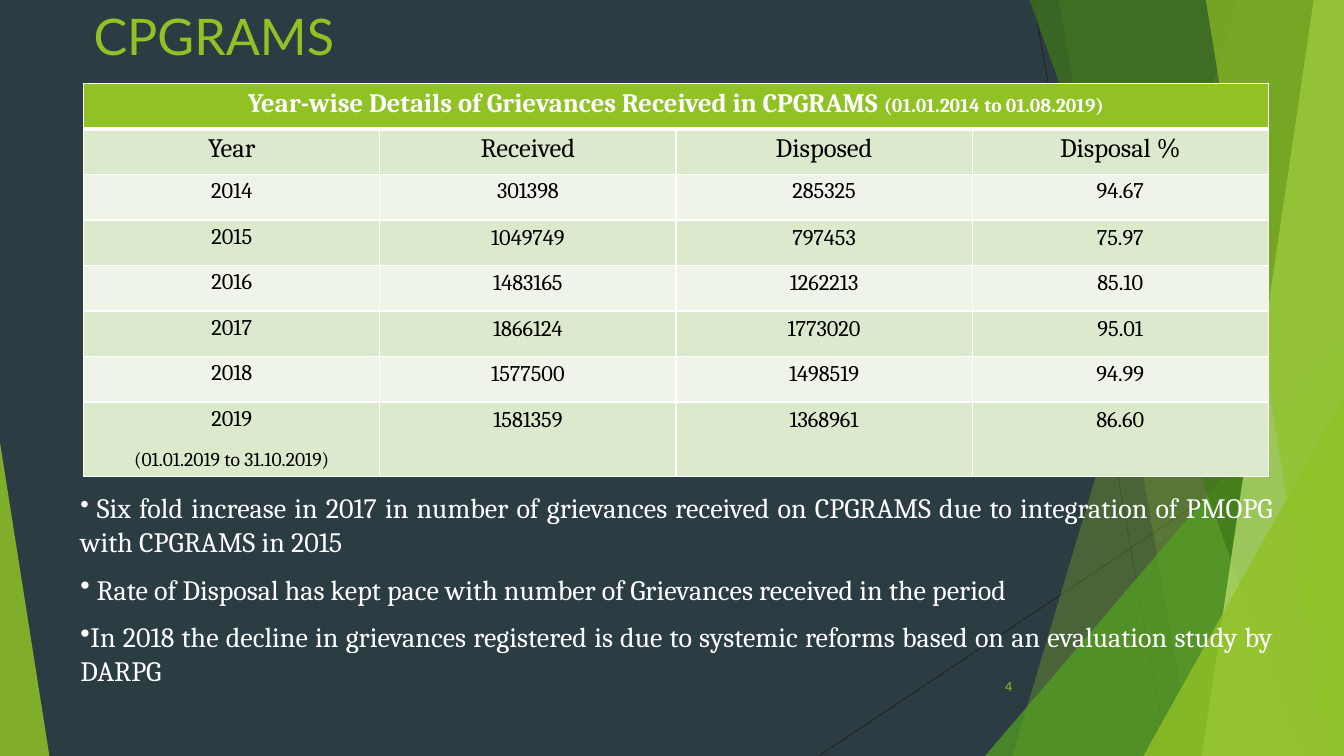
from collections import namedtuple
from dataclasses import dataclass

from lxml import etree
from pptx import Presentation
from pptx.dml.color import RGBColor
from pptx.enum.shapes import MSO_CONNECTOR as CONN, MSO_SHAPE as SHAPE
from pptx.enum.text import MSO_ANCHOR as ANCHOR, PP_ALIGN as ALIGN
from pptx.oxml.ns import qn
from pptx.util import Inches, Pt

Box = namedtuple("Box", "x y w h")


@dataclass(frozen=True)
class Theme:
    back: str = "2C3C43"
    green: str = "90C226"
    leaf: str = "54A021"
    forest: str = "3F7819"
    lime: str = "C0E474"
    line: str = "262626"
    white: str = "FFFFFF"
    black: str = "000000"
    band_dark: str = "DBE9CD"
    band_light: str = "EEF4E8"
    sans: str = "Lato"
    serif: str = "Cambria"
    title: int = 36
    body: int = 20
    lead: int = 18
    head: int = 19
    cell: int = 16
    note: int = 14
    number: int = 9


T = Theme()
HEADING = [("Year-wise Details of Grievances Received in CPGRAMS ", T.head),
           ("(01.01.2014 to 01.08.2019)", T.note)]
COLUMNS = ["Year", "Received", "Disposed", "Disposal %"]
RECORDS = [
    ("2014", "301398", "285325", "94.67"),
    ("2015", "1049749", "797453", "75.97"),
    ("2016", "1483165", "1262213", "85.10"),
    ("2017", "1866124", "1773020", "95.01"),
    ("2018", "1577500", "1498519", "94.99"),
    ("2019", "1581359", "1368961", "86.60"),
]
LAST_PERIOD = "(01.01.2019 to 31.10.2019)"
POINTS = [
    [(" ", T.lead), ("Six fold increase in 2017 in number of grievances received on CPGRAMS "
                     "due to integration of PMOPG with CPGRAMS in 2015", T.body)],
    [(" Rate of Disposal has kept pace with number of Grievances received in the period", T.body)],
    [("In 2018 the decline in grievances registered is due to systemic reforms "
      "based on an evaluation study by DARPG", T.body)],
]


def rgb(color):
    return RGBColor.from_string(color)


def add_run(p, text, size, color, font, bold=False):
    r = p.add_run()
    r.text = text
    r.font.size, r.font.name, r.font.bold = Pt(size), font, bold
    r.font.color.rgb = rgb(color)


def add_text_box(s, box):
    tf = s.shapes.add_textbox(*map(Inches, box)).text_frame
    tf.word_wrap = True
    return tf


def paint(sp, color, opacity):
    sp.shadow.inherit = False
    sp.fill.solid()
    sp.fill.fore_color.rgb = rgb(color)
    sp.line.fill.background()
    clr = sp.fill._xPr.find(qn("a:solidFill"))[0]
    etree.SubElement(clr, qn("a:alpha"), val=str(opacity * 1000))


def add_ray(s, x1, y1, x2, y2):
    cn = s.shapes.add_connector(CONN.STRAIGHT, *map(Inches, (x1, y1, x2, y2)))
    cn.line.color.rgb = rgb(T.line)
    cn.line.width = Pt(0.75)
    etree.SubElement(cn._element.spPr, qn("a:effectLst"))


def add_band(s, box, top, bottom, color, opacity):
    right, base = box.x + box.w, box.y + box.h
    corners = [(top, box.y), (right, box.y), (right, base), (bottom, base)]
    points = [(Inches(x), Inches(y)) for x, y in corners]
    fb = s.shapes.build_freeform(*points[0], scale=1.0)
    fb.add_line_segments(points[1:], close=True)
    paint(fb.convert_to_shape(), color, opacity)


def add_wedge(s, box, apex, color, opacity):
    sp = s.shapes.add_shape(SHAPE.ISOSCELES_TRIANGLE, *map(Inches, box))
    sp.adjustments[0] = apex
    paint(sp, color, opacity)


def add_backdrop(s, box):
    right, base = box.x + box.w, box.y + box.h
    add_ray(s, right - 3.08, box.y, right - 1.75, base)
    add_ray(s, right, base - 3.47, right - 5.21, base)

    def band(top, bottom, color, opacity):
        add_band(s, box, right - top, right - bottom, color, opacity)

    def wedge(w, h, color, opacity):
        add_wedge(s, Box(right - w, base - h, w, h), 1, color, opacity)

    band(1.05, 3.29, T.green, 30)
    band(2.83, 1.5, T.green, 20)
    wedge(3.56, 4.17, T.leaf, 72)
    band(3.12, 0.42, T.forest, 70)
    band(0.3, 1.41, T.lime, 70)
    band(1.37, 0.15, T.green, 65)
    wedge(1.99, 3.57, T.green, 80)
    add_wedge(s, Box(box.x, base - 3.11, 0.49, 3.11), 0, T.green, 85)


def add_title(s, box):
    p = add_text_box(s, box).paragraphs[0]
    add_run(p, "CPGRAMS", T.title, T.green, T.sans)


def add_page_number(s, box):
    tf = add_text_box(s, box)
    tf.vertical_anchor = ANCHOR.MIDDLE
    p = tf.paragraphs[0]
    p.alignment = ALIGN.RIGHT
    add_run(p, "4", T.number, T.green, T.sans)


def set_borders(cell, top, bottom):
    tcPr = cell._tc.get_or_add_tcPr()
    for side, width in (("L", 1), ("R", 1), ("T", top), ("B", bottom)):
        ln = etree.SubElement(tcPr, qn("a:ln" + side), w=str(Pt(width)))
        fill = etree.SubElement(ln, qn("a:solidFill"))
        etree.SubElement(fill, qn("a:srgbClr"), val=T.white)


def fill_cell(cell, paragraphs, color, bold, spaced):
    tf = cell.text_frame
    if spaced:
        cell.margin_left = cell.margin_right = Inches(0.07)
        cell.margin_top = cell.margin_bottom = 0
    for i, runs in enumerate(paragraphs):
        p = tf.add_paragraph() if i else tf.paragraphs[0]
        p.alignment = ALIGN.CENTER
        if spaced:
            p.line_spacing, p.space_after = 1.15, Pt(10)
        for text, size in runs:
            add_run(p, text, size, color, T.serif, bold)


def add_grievance_table(s, box):
    rows = [[[HEADING]], [[[(c, T.head)]] for c in COLUMNS]]
    rows += [[[[(v, T.cell)]] for v in record] for record in RECORDS]
    rows[-1][0].append([(LAST_PERIOD, T.note)])
    count, last_height = len(rows), 0.74
    table = s.shapes.add_table(count, len(COLUMNS), *map(Inches, box)).table
    for col in table.columns:
        col.width = Inches(box.w / len(COLUMNS))
    for row in table.rows:
        row.height = Inches((box.h - last_height) / (count - 1))
    table.rows[count - 1].height = Inches(last_height)
    table.cell(0, 0).merge(table.cell(0, len(COLUMNS) - 1))

    for i, row in enumerate(rows):
        shade = T.green if i == 0 else T.band_dark if i % 2 else T.band_light
        for j in range(len(COLUMNS)):
            cell = table.cell(i, j)
            set_borders(cell, 3 if i == 1 else 1, 3 if i == 0 else 1)
            cell.fill.solid()
            cell.fill.fore_color.rgb = rgb(shade)
        for j, paragraphs in enumerate(row):
            fill_cell(table.cell(i, j), paragraphs, T.black if i else T.white,
                      i == 0, i <= 2 or j == 0)


def add_points(s, box):
    tf = add_text_box(s, box)
    for i, runs in enumerate(POINTS):
        p = tf.add_paragraph() if i else tf.paragraphs[0]
        p.alignment, p.space_after = ALIGN.JUSTIFY, Pt(10)
        etree.SubElement(p._p.get_or_add_pPr(), qn("a:buChar"), char="•")
        for text, size in runs:
            add_run(p, text, size, T.white, T.serif)


def main():
    prs = Presentation()
    prs.slide_width, prs.slide_height = Inches(13.33), Inches(7.5)
    s = prs.slides.add_slide(prs.slide_layouts[6])
    s.background.fill.solid()
    s.background.fill.fore_color.rgb = rgb(T.back)
    add_backdrop(s, Box(0, 0, 13.33, 7.5))
    add_title(s, Box(0.83, 0, 11.67, 0.83))
    add_grievance_table(s, Box(0.83, 0.83, 11.75, 3.9))
    add_page_number(s, Box(9.39, 6.61, 0.75, 0.4))
    add_points(s, Box(0.7, 4.82, 12.03, 2.06))
    prs.save("out.pptx")


if __name__ == "__main__":
    main()
